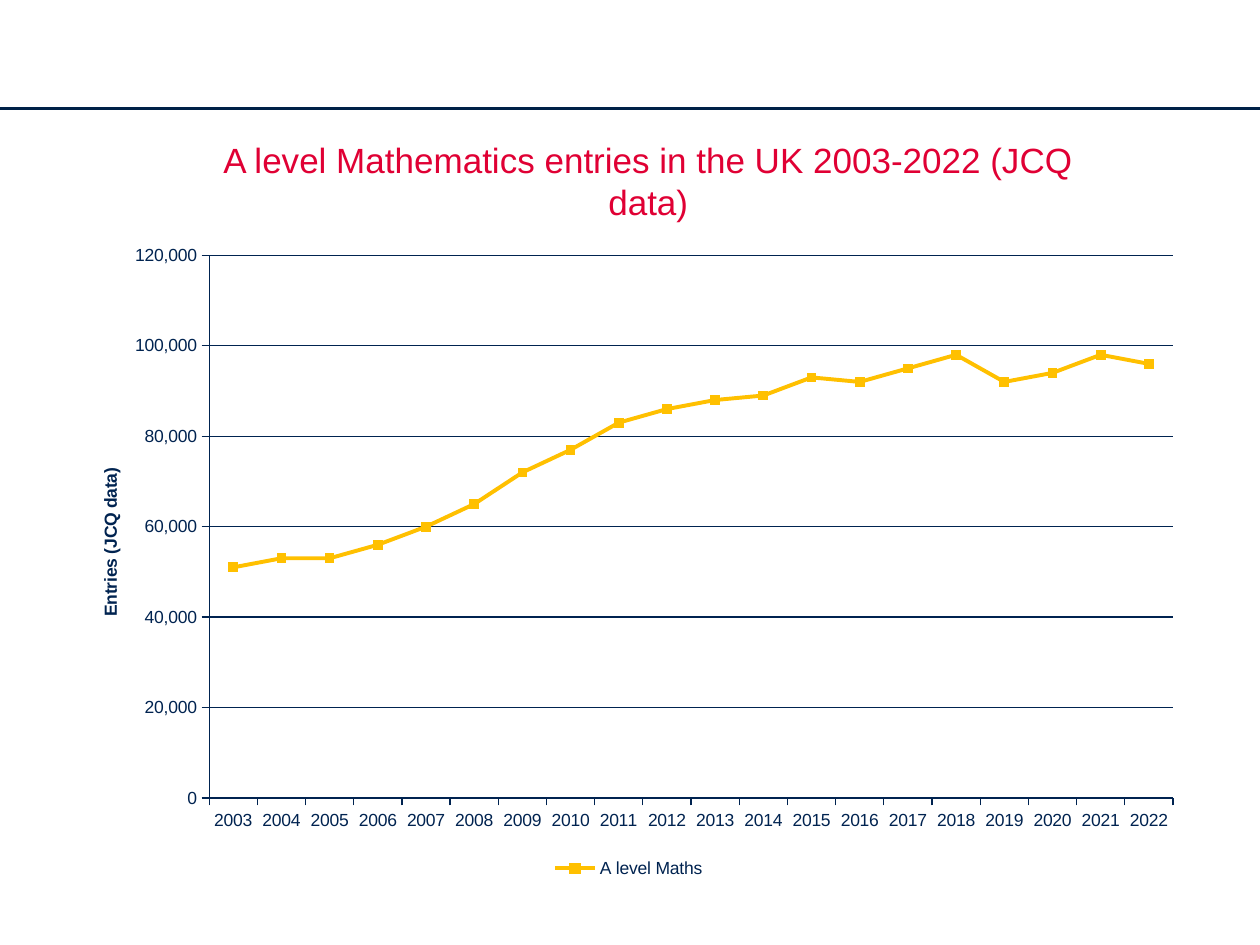
from lxml.etree import SubElement
from pptx import Presentation
from pptx.chart.data import CategoryChartData
from pptx.dml.color import RGBColor
from pptx.enum.chart import XL_CHART_TYPE, XL_LEGEND_POSITION, XL_MARKER_STYLE, XL_TICK_MARK
from pptx.enum.shapes import MSO_CONNECTOR
from pptx.enum.text import MSO_ANCHOR, PP_ALIGN
from pptx.oxml import parse_xml
from pptx.oxml.ns import nsdecls, qn
from pptx.util import Pt

ENTRIES = {
    2003: 51000, 2004: 53000, 2005: 53000, 2006: 56000, 2007: 60000,
    2008: 65000, 2009: 72000, 2010: 77000, 2011: 83000, 2012: 86000,
    2013: 88000, 2014: 89000, 2015: 93000, 2016: 92000, 2017: 95000,
    2018: 98000, 2019: 92000, 2020: 94000, 2021: 98000, 2022: 96000,
}


def rgb(value):
    return RGBColor.from_string(value)


def set_layout(element, **places):
    """Place a chart part by fractions of the chart area."""
    old = element.find(qn("c:layout"))
    index = 0
    if old is not None:
        index = element.index(old)
        element.remove(old)
    parts = "".join(f'<c:{k} val="{v}"/>' for k, v in places.items())
    element.insert(index, parse_xml(
        f'<c:layout {nsdecls("c")}><c:manualLayout>{parts}</c:manualLayout></c:layout>'))


class SlideBuilder:
    font, navy, red, gold = "Arial", "002350", "E00034", "FFC000"

    def __init__(self, prs):
        self.s = prs.slides.add_slide(prs.slide_layouts[5])

    def style_font(self, font, size, color, bold=False):
        values = {"name": self.font, "size": Pt(size), "bold": bold}
        for name, value in values.items():
            setattr(font, name, value)
        font.color.rgb = rgb(color)

    def style_line(self, line, color, width):
        line.color.rgb = rgb(color)
        line.width = Pt(width)

    def rule(self, x1, y1, x2, y2, color, width):
        line = self.s.shapes.add_connector(
            MSO_CONNECTOR.STRAIGHT, Pt(x1), Pt(y1), Pt(x2), Pt(y2))
        self.style_line(line.line, color, width)
        SubElement(line._element.spPr, qn("a:effectLst"))

    def title(self, text, **box):
        sp = self.s.shapes.title
        for name, value in box.items():
            setattr(sp, name, Pt(value))
        tf = sp.text_frame
        tf.word_wrap, tf.vertical_anchor = True, MSO_ANCHOR.TOP
        p = tf.paragraphs[0]
        p.alignment = PP_ALIGN.CENTER
        r = p.add_run()
        r.text = text
        self.style_font(r.font, 20, self.red)

    def line_chart(self, name, values, axis_label, x, y, w, h):
        data = CategoryChartData(number_format="#,##0")
        data.categories = [str(year) for year in values]
        data.add_series(name, values.values())
        chart = self.s.shapes.add_chart(
            XL_CHART_TYPE.LINE_MARKERS, Pt(x), Pt(y), Pt(w), Pt(h), data).chart
        self.style_font(chart.font, 10, self.navy)
        chart.has_title = False
        chart.plots[0].vary_by_categories = False
        set_layout(chart._chartSpace.chart.plotArea, layoutTarget="inner",
                   xMode="edge", yMode="edge", x=0.13, y=0.04, w=0.85, h=0.83)

        # Legend
        chart.has_legend = True
        chart.legend.position = XL_LEGEND_POSITION.BOTTOM
        chart.legend.include_in_layout = False
        self.style_font(chart.legend.font, 10, self.navy)

        # Axes
        for axis in (chart.category_axis, chart.value_axis):
            axis.major_tick_mark = XL_TICK_MARK.OUTSIDE
            axis.minor_tick_mark = XL_TICK_MARK.NONE
            self.style_font(axis.tick_labels.font, 10, self.navy)
            self.style_line(axis.format.line, self.navy, 0.75)
        axis = chart.value_axis
        axis.minimum_scale, axis.maximum_scale, axis.major_unit = 0, 120000, 20000
        axis.tick_labels.number_format = "#,##0"
        axis.tick_labels.number_format_is_linked = False
        axis.has_major_gridlines = True
        self.style_line(axis.major_gridlines.format.line, self.navy, 0.75)

        # Value axis title
        tf = axis.axis_title.text_frame
        r = tf.paragraphs[0].add_run()
        r.text = axis_label
        self.style_font(r.font, 10, self.navy, bold=True)
        tf._txBody.find(qn("a:bodyPr")).set("rot", "-5400000")
        set_layout(axis.axis_title._element, xMode="edge", yMode="edge", x=0.03, y=0.36)

        # Series
        series = chart.plots[0].series[0]
        series.smooth = False
        self.style_line(series.format.line, self.gold, 2.25)
        marker = series.marker
        marker.style, marker.size = XL_MARKER_STYLE.SQUARE, 5
        marker.format.fill.solid()
        marker.format.fill.fore_color.rgb = rgb(self.gold)
        self.style_line(marker.format.line, self.gold, 0.75)


def main():
    prs = Presentation()
    prs.slide_width, prs.slide_height = Pt(720), Pt(540)
    slide = SlideBuilder(prs)

    # Header rule and title
    slide.rule(0, 62, 720, 62, "002147", 2.25)
    slide.title("A level Mathematics entries in the UK 2003-2022 (JCQ data)",
                left=103.7, top=75.6, width=533.5, height=55.4)

    # Entries by year
    slide.line_chart("A level Maths", ENTRIES, "Entries (JCQ data)", 35.3, 131, 648, 373.7)

    prs.save("out.pptx")


if __name__ == "__main__":
    main()
